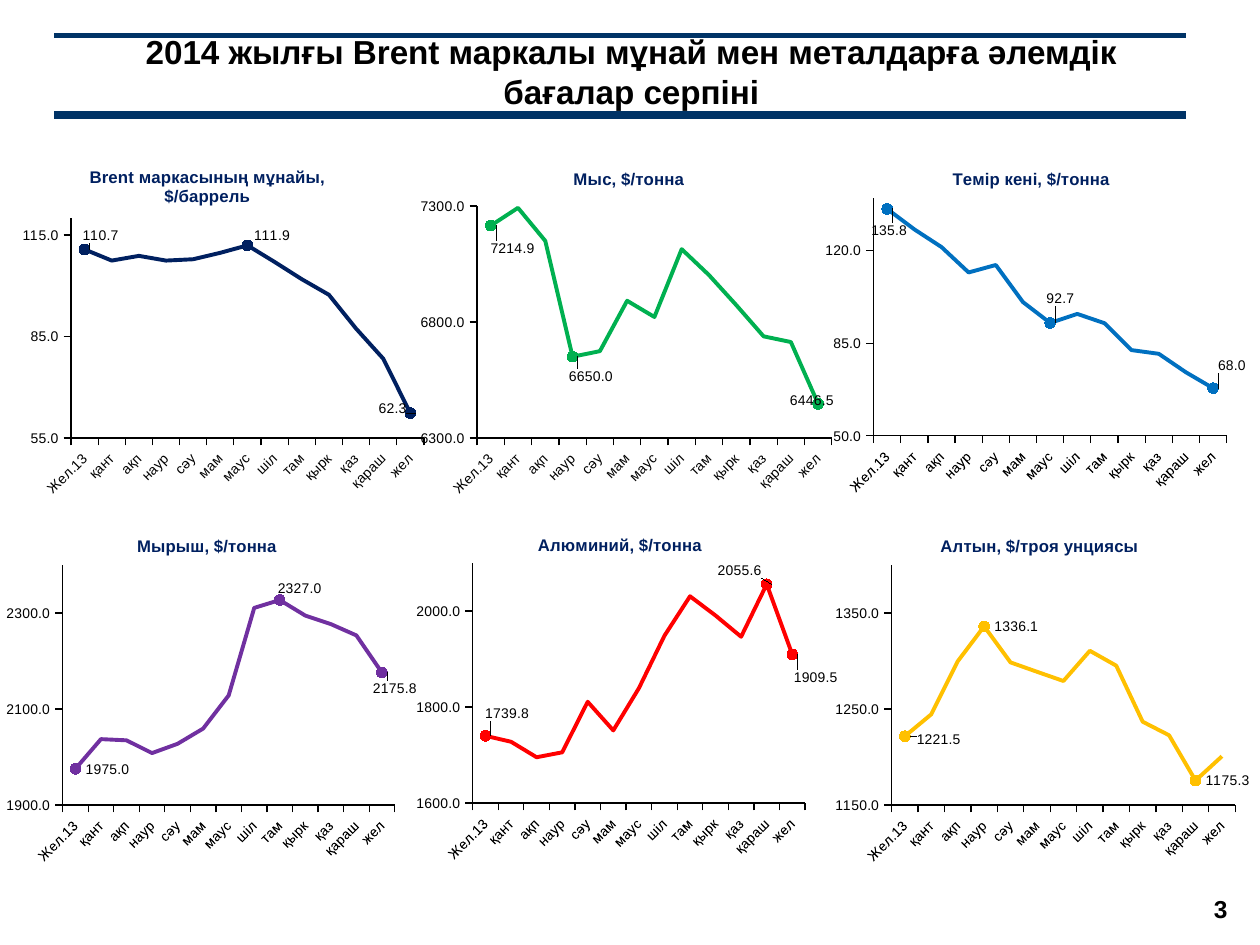
from lxml import etree
from pptx import Presentation
from pptx.chart.data import CategoryChartData
from pptx.dml.color import RGBColor
from pptx.enum.chart import (XL_CHART_TYPE, XL_LABEL_POSITION,
                             XL_MARKER_STYLE, XL_TICK_MARK)
from pptx.enum.shapes import MSO_CONNECTOR, MSO_SHAPE
from pptx.enum.text import MSO_ANCHOR, PP_ALIGN
from pptx.oxml import parse_xml
from pptx.oxml.ns import nsdecls, qn
from pptx.util import Pt

NAVY = RGBColor(0x00, 0x33, 0x66)
INK = RGBColor(0x00, 0x20, 0x60)
BLACK = RGBColor(0, 0, 0)
WHITE = RGBColor(255, 255, 255)
GREEN = RGBColor(0x00, 0xB0, 0x50)
BLUE = RGBColor(0x00, 0x70, 0xC0)
PLUM = RGBColor(0x70, 0x30, 0xA0)
RED = RGBColor(255, 0, 0)
GOLD = RGBColor(0xFF, 0xC0, 0x00)
FONT = "Arial"

MONTHS = ["Жел.13", "қант", "ақп", "наур", "сәу", "мам", "маус",
          "шіл", "там", "қырк", "қаз", "қараш", "жел"]

# box: left, top, width, height; plot: left, top, right, bottom
# head: left, top of the title; marks: month index -> label shift
CHARTS = [
    dict(title=["Brent маркасының мұнайы,", "$/баррель"], color=INK,
         box=(8.6, 82.8, 238.3, 205.2), plot=(40.6, 124.6, 242.3, 250.3),
         head=(49, 92), scale=(55, 120, 30),
         vals=[110.7, 107.4, 108.8, 107.4, 107.8, 109.7, 111.9,
               107.0, 101.9, 97.3, 87.3, 78.4, 62.3],
         marks={0: (-7, -8), 6: (-2, -6), 12: (-24, -3)}),
    dict(title=["Мыс, $/тонна"], color=GREEN,
         box=(235.4, 82.8, 244.8, 205.2), plot=(272.6, 117.7, 475.4, 250.3),
         head=(326, 94), scale=(6300, 7300, 500),
         vals=[7214.9, 7291.5, 7149.2, 6650.0, 6673.6, 6891.1, 6821.1,
               7113.4, 7001.8, 6872.2, 6737.5, 6712.9, 6446.5],
         marks={0: (-6, 13), 3: (-8, 11), 12: (-22, -2)}),
    dict(title=["Темір кені, $/тонна"], color=BLUE,
         box=(468, 82.8, 244.1, 203.8), plot=(499.4, 113.1, 702.3, 249.1),
         head=(543, 94), scale=(50, 140, 35),
         vals=[135.8, 128.1, 121.4, 111.8, 114.6, 100.6, 92.7,
               96.1, 92.6, 82.4, 81.0, 74.0, 68.0],
         marks={0: (-15, 12), 6: (-8, -14), 12: (-3, -13)}),
    dict(title=["Мырыш, $/тонна"], color=PLUM,
         box=(0, 292.3, 238.3, 205.2), plot=(36, 322.9, 226.9, 460),
         head=(77, 304), scale=(1900, 2400, 200),
         vals=[1975.0, 2036.9, 2034.5, 2007.9, 2027.2, 2059.0, 2128.1,
               2310.6, 2327.0, 2294.6, 2276.8, 2253.2, 2175.8],
         marks={0: (0, 0), 8: (-7, -7), 12: (-11, 9)}),
    dict(title=["Алюминий, $/тонна"], color=RED,
         box=(235.4, 292.3, 243.4, 203.8), plot=(270.3, 321.7, 461.1, 458.9),
         head=(306, 303), scale=(1600, 2100, 200),
         vals=[1739.8, 1727.4, 1695.2, 1705.4, 1810.7, 1751.1, 1839.0,
               1948.3, 2030.5, 1990.4, 1946.2, 2055.6, 1909.5],
         marks={0: (-6, -13), 11: (-34, -8), 12: (-5, 13)}),
    dict(title=["Алтын, $/троя унциясы"], color=GOLD,
         box=(473, 292.3, 241.2, 205.2), plot=(509.7, 322.9, 706.9, 460),
         head=(536, 304), scale=(1150, 1400, 100),
         vals=[1221.5, 1244.3, 1299.6, 1336.1, 1298.5, 1288.7, 1279.1,
               1310.6, 1295.1, 1236.6, 1222.5, 1175.3, 1200.6],
         marks={0: (1, 2), 3: (0, 0), 11: (0, 0)}),
]


def add_run(para, text, size, color):
    run = para.add_run()
    run.text = text
    font = run.font
    font.name, font.size, font.bold = FONT, Pt(size), True
    font.color.rgb = color


def add_rule(slide, top, width):
    rule = slide.shapes.add_connector(
        MSO_CONNECTOR.STRAIGHT, Pt(31), Pt(top), Pt(677.5), Pt(top))
    rule.line.color.rgb = NAVY
    rule.line.width = Pt(width)
    etree.SubElement(rule.element.spPr, qn("a:effectLst"))


def add_title(slide, text):
    box = slide.shapes.add_textbox(Pt(33), Pt(20), Pt(649.5), Pt(41))
    frame = box.text_frame
    frame.word_wrap = True
    frame.vertical_anchor = MSO_ANCHOR.MIDDLE
    frame.margin_left, frame.margin_right = Pt(20), Pt(14)
    para = frame.paragraphs[0]
    para.alignment = PP_ALIGN.CENTER
    add_run(para, text, 19, BLACK)


def add_number(slide, text):
    box = slide.shapes.add_shape(
        MSO_SHAPE.RECTANGLE, Pt(676), Pt(499.7), Pt(43.2), Pt(39.6))
    box.shadow.inherit = False
    box.fill.solid()
    box.fill.fore_color.rgb = WHITE
    box.line.fill.background()
    box.text_frame.vertical_anchor = MSO_ANCHOR.MIDDLE
    para = box.text_frame.paragraphs[0]
    para.alignment = PP_ALIGN.CENTER
    add_run(para, text, 14, BLACK)


def set_place(node, index, tags):
    """Give a chart part a manual layout."""
    for old in node.findall(qn("c:layout")):
        node.remove(old)
    body = "".join(f'<c:{tag} val="{val}"/>' for tag, val in tags)
    node.insert(index, parse_xml(
        f'<c:layout {nsdecls("c")}><c:manualLayout>{body}'
        '</c:manualLayout></c:layout>'))


def style_axis(axis):
    axis.has_major_gridlines = False
    axis.major_tick_mark = XL_TICK_MARK.OUTSIDE
    axis.minor_tick_mark = XL_TICK_MARK.NONE
    axis.format.line.color.rgb = BLACK
    axis.format.line.width = Pt(0.75)
    axis.tick_labels.font.size = Pt(8)


def style_line(item, color):
    item.format.line.color.rgb = color
    item.format.line.width = Pt(2.25)


def add_marks(chart, line, item):
    wide, high = item["box"][2:]
    line.data_labels.show_value = False
    for index, (dx, dy) in item["marks"].items():
        point = line.points[index]
        style_line(point, item["color"])
        mark = point.marker
        mark.style, mark.size = XL_MARKER_STYLE.CIRCLE, 6
        mark.format.fill.solid()
        mark.format.fill.fore_color.rgb = item["color"]
        mark.format.line.color.rgb = item["color"]
        point.data_label.position = XL_LABEL_POSITION.RIGHT
        if dx or dy:
            node = chart.element.xpath(f"//c:dLbl[c:idx/@val='{index}']")[0]
            set_place(node, 1, [("x", round(dx / wide, 4)),
                                ("y", round(dy / high, 4))])
    # Leader lines from the shifted labels
    chart.element.xpath("//c:ser/c:dLbls")[0].append(parse_xml(
        f'<c:extLst {nsdecls("c")}><c:ext '
        'uri="{CE6537A1-D6FC-4f65-9D91-7224C49458BB}" xmlns:c15='
        '"http://schemas.microsoft.com/office/drawing/2012/chart">'
        '<c15:showLeaderLines val="1"/></c:ext></c:extLst>'))


def add_graph(slide, item):
    left, top, wide, high = item["box"]
    data = CategoryChartData(number_format="0.0")
    data.categories = MONTHS
    data.add_series(" ".join(item["title"]), item["vals"])
    chart = slide.shapes.add_chart(
        XL_CHART_TYPE.LINE, *map(Pt, item["box"]), data).chart
    chart.has_legend = False
    chart.font.name, chart.font.size = FONT, Pt(8)
    chart.font.color.rgb = BLACK

    # Title
    frame = chart.chart_title.text_frame
    for num, text in enumerate(item["title"]):
        para = frame.add_paragraph() if num else frame.paragraphs[0]
        add_run(para, text, 9.6, INK)
    x, y = item["head"]
    set_place(chart.element.xpath("//c:title")[0], 1, [
        ("xMode", "edge"), ("yMode", "edge"),
        ("x", round((x - left) / wide, 4)), ("y", round((y - top) / high, 4))])

    # Axes
    style_axis(chart.category_axis)
    style_axis(chart.value_axis)
    axis = chart.value_axis
    axis.minimum_scale, axis.maximum_scale, axis.major_unit = item["scale"]
    axis.tick_labels.number_format = "0.0"
    axis.tick_labels.number_format_is_linked = False
    turn = chart.element.xpath("//c:catAx/c:txPr/a:bodyPr")[0]
    turn.set("rot", "-2700000")
    turn.set("vert", "horz")

    # Line, marked points and plot area
    plot = chart.plots[0]
    plot.vary_by_categories = False
    line = plot.series[0]
    line.smooth = False
    line.marker.style = XL_MARKER_STYLE.NONE
    style_line(line, item["color"])
    add_marks(chart, line, item)
    x, y, right, base = item["plot"]
    set_place(chart.element.xpath("//c:plotArea")[0], 0, [
        ("layoutTarget", "inner"), ("xMode", "edge"), ("yMode", "edge"),
        ("x", round((x - left) / wide, 4)), ("y", round((y - top) / high, 4)),
        ("w", round((right - x) / wide, 4)),
        ("h", round((base - y) / high, 4))])


def main():
    deck = Presentation()
    deck.slide_width, deck.slide_height = Pt(720), Pt(540)
    slide = deck.slides.add_slide(deck.slide_layouts[6])
    # Header and page number
    add_rule(slide, 65.5, 4.5)
    add_rule(slide, 20.2, 3)
    add_number(slide, "3")
    add_title(slide, "2014 жылғы Brent маркалы мұнай мен металдарға "
                     "әлемдік бағалар серпіні")
    # Price charts
    for item in CHARTS:
        add_graph(slide, item)
    deck.save("out.pptx")


if __name__ == "__main__":
    main()
